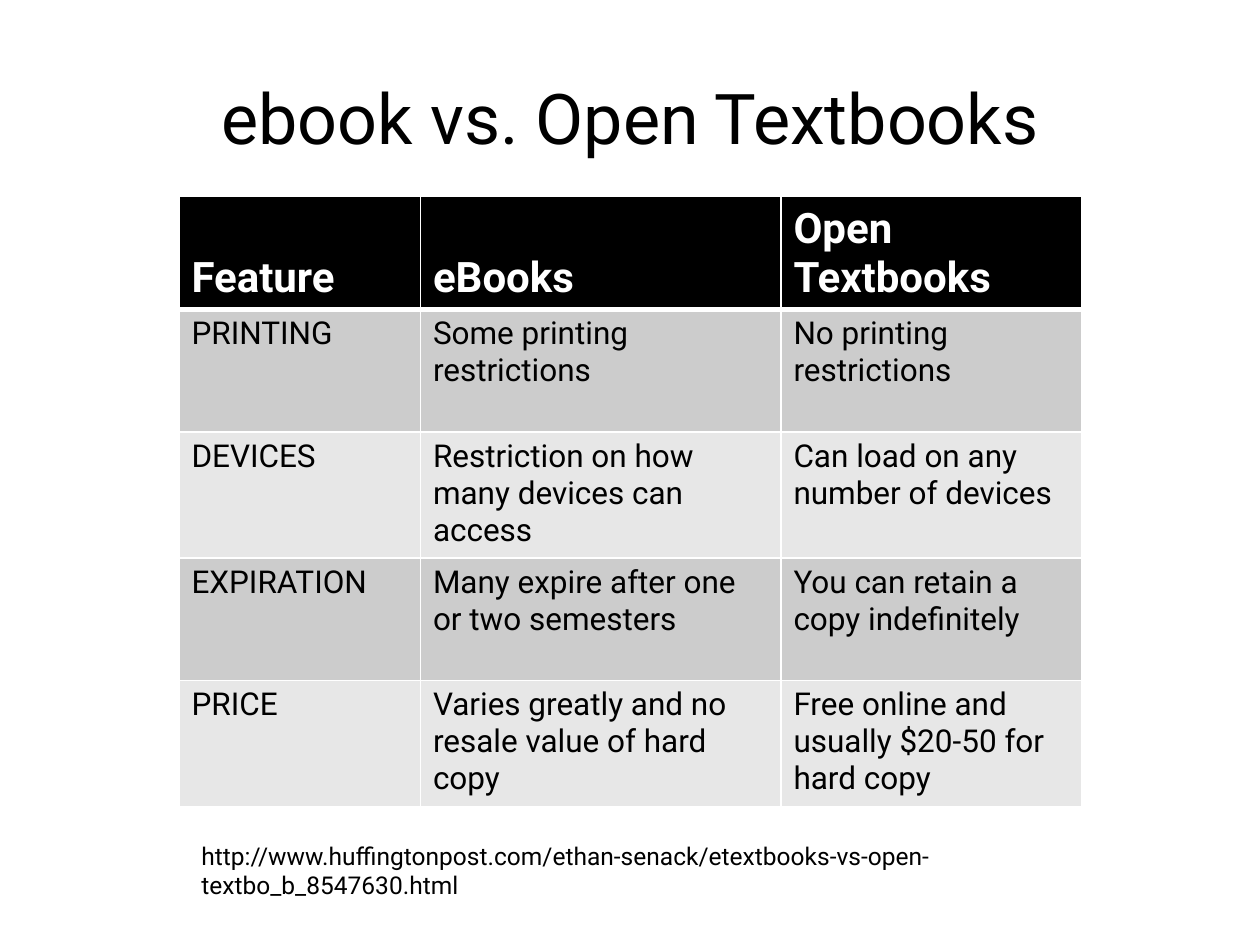
from dataclasses import dataclass

from lxml import etree
from pptx import Presentation
from pptx.dml.color import RGBColor
from pptx.enum.text import MSO_ANCHOR, PP_ALIGN
from pptx.oxml.ns import qn
from pptx.util import Pt

TOP, MIDDLE, BOTTOM = MSO_ANCHOR.TOP, MSO_ANCHOR.MIDDLE, MSO_ANCHOR.BOTTOM
LEFT, CENTER = PP_ALIGN.LEFT, PP_ALIGN.CENTER


@dataclass(frozen=True)
class Theme:
    font: str = "Roboto"
    black: str = "000000"
    white: str = "FFFFFF"
    bands: tuple = ("CCCCCC", "E7E7E7")
    title_size: int = 40
    header_size: int = 24
    body_size: int = 18
    source_size: int = 14
    thin: int = 1
    thick: int = 3


THEME = Theme()

TITLE = "ebook vs. Open Textbooks"
SOURCE = ("http://www.huffingtonpost.com/ethan-senack/"
          "etextbooks-vs-open-textbo_b_8547630.html")
COMPARISON = [
    ("Feature", "eBooks", "Open Textbooks"),
    ("PRINTING", "Some printing restrictions", "No printing\nrestrictions"),
    ("DEVICES", "Restriction on how many devices can access",
     "Can load on any number of devices"),
    ("EXPIRATION", "Many expire after one or two semesters",
     "You can retain a copy indefinitely"),
    ("PRICE", "Varies greatly and no resale value of hard copy",
     "Free online and usually $20-50 for hard copy"),
]
COLUMN_WIDTHS = (138, 206, 172)
HEADER_HEIGHT, BODY_HEIGHT = 63, 70


def write_text(frame, text, *, size, color=THEME.black, bold=False, align=LEFT):
    """Fill a text frame, one paragraph per line of text."""
    frame.word_wrap = True
    for index, line in enumerate(text.split("\n")):
        para = frame.paragraphs[0] if index == 0 else frame.add_paragraph()
        para.alignment = align
        span = para.add_run()
        span.text = line
        span.font.name = THEME.font
        span.font.size = Pt(size)
        span.font.bold = bold
        span.font.color.rgb = RGBColor.from_string(color)


def add_text_box(page, left, top, width, height, text, *, anchor=TOP, **style):
    box = page.shapes.add_textbox(Pt(left), Pt(top), Pt(width), Pt(height))
    box.text_frame.vertical_anchor = anchor
    write_text(box.text_frame, text, **style)


def set_borders(cell, top, bottom):
    """Draw white cell borders; the side borders are always thin."""
    properties = cell._tc.get_or_add_tcPr()
    widths = {"lnL": THEME.thin, "lnR": THEME.thin, "lnT": top, "lnB": bottom}
    for side, width in widths.items():
        line = etree.SubElement(properties, qn(f"a:{side}"), w=str(Pt(width)))
        fill = etree.SubElement(line, qn("a:solidFill"))
        etree.SubElement(fill, qn("a:srgbClr"), val=THEME.white)


def format_cell(cell, text, row):
    header = row == 0
    set_borders(cell, top=THEME.thick if row == 1 else THEME.thin,
                bottom=THEME.thick if header else THEME.thin)
    color = THEME.black if header else THEME.bands[(row - 1) % 2]
    cell.fill.solid()
    cell.fill.fore_color.rgb = RGBColor.from_string(color)
    if header:
        cell.vertical_anchor = BOTTOM
        write_text(cell.text_frame, text, size=THEME.header_size,
                   color=THEME.white, bold=True)
    else:
        cell.vertical_anchor = TOP
        write_text(cell.text_frame, text, size=THEME.body_size)


def add_comparison_table(page, left, top):
    heights = [HEADER_HEIGHT] + [BODY_HEIGHT] * (len(COMPARISON) - 1)
    table = page.shapes.add_table(
        len(heights), len(COLUMN_WIDTHS), Pt(left), Pt(top),
        Pt(sum(COLUMN_WIDTHS)), Pt(sum(heights))).table
    for column, width in zip(table.columns, COLUMN_WIDTHS):
        column.width = Pt(width)
    for row, (height, texts) in enumerate(zip(heights, COMPARISON)):
        table.rows[row].height = Pt(height)
        for column, text in enumerate(texts):
            format_cell(table.cell(row, column), text, row)


def main():
    deck = Presentation()
    deck.slide_width, deck.slide_height = Pt(720), Pt(540)
    page = deck.slides.add_slide(deck.slide_layouts[6])

    # Title
    add_text_box(page, 36, 21.6, 648, 90, TITLE, anchor=MIDDLE,
                 size=THEME.title_size, align=CENTER)
    # Comparison table
    add_comparison_table(page, 102.25, 112)
    # Source link
    add_text_box(page, 108, 477, 572, 63, SOURCE, size=THEME.source_size)

    deck.save("out.pptx")


if __name__ == "__main__":
    main()
